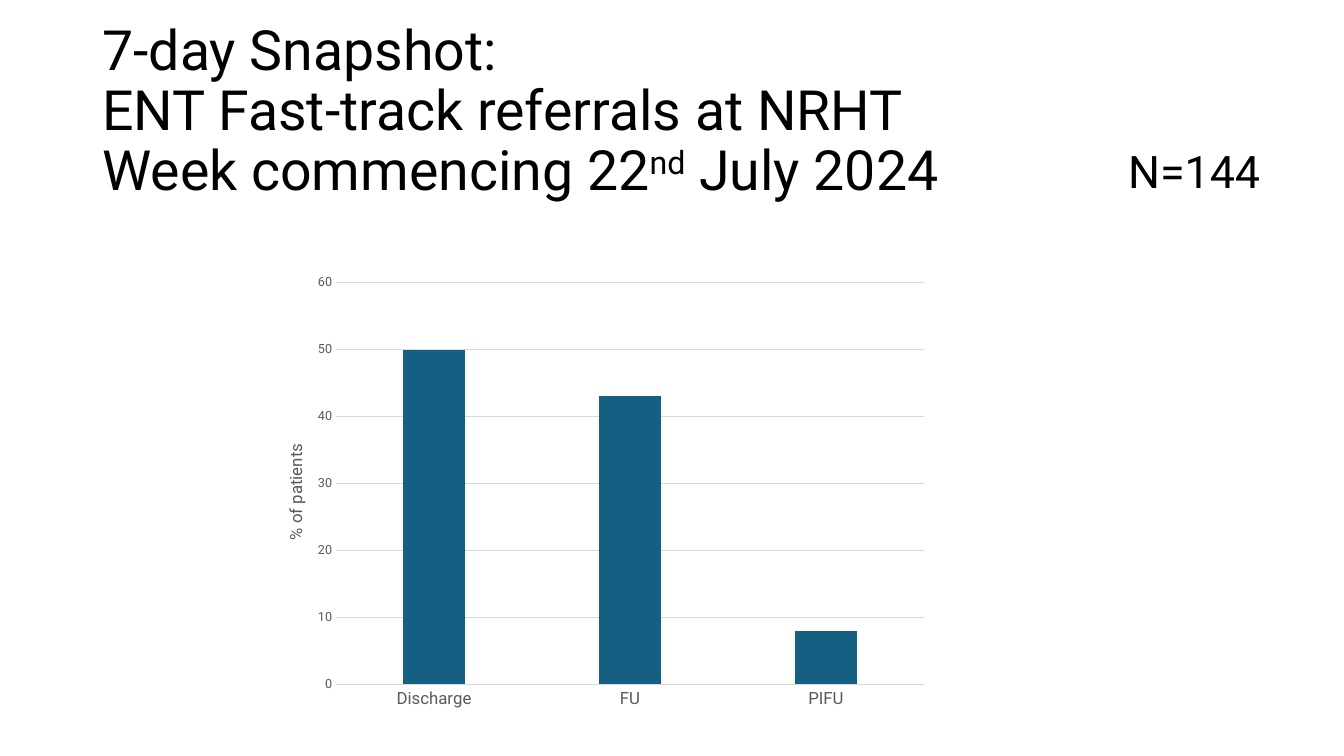
from dataclasses import dataclass

from pptx import Presentation
from pptx.chart.data import CategoryChartData
from pptx.dml.color import RGBColor as RGB
from pptx.enum.chart import XL_CHART_TYPE as CHART, XL_TICK_MARK as TICK
from pptx.enum.text import MSO_ANCHOR as ANCHOR, MSO_AUTO_SIZE as AUTO
from pptx.oxml import parse_xml
from pptx.oxml.ns import nsdecls, qn
from pptx.util import Emu, Pt


@dataclass(frozen=True)
class Theme:
    font: str = "Roboto"
    text: RGB = RGB(0x00, 0x00, 0x00)
    axis: RGB = RGB(0x59, 0x59, 0x59)
    grid: RGB = RGB(0xD9, 0xD9, 0xD9)
    bar: RGB = RGB(0x15, 0x60, 0x82)
    title: float = 39.6
    count: float = 32
    label: float = 12
    tick: float = 9


THEME = Theme()
TITLE_LINES = ["7-day Snapshot:", "ENT Fast-track referrals at NRHT", "Week commencing 22"]
OUTCOMES = {"Discharge": 50, "FU": 43, "PIFU": 8}


def px(n):
    return Emu(n * 9525)


def style(font, size, color):
    font.name, font.size, font.bold = THEME.font, Pt(size), False
    font.color.rgb = color


def add_title(s, box):
    sp = s.shapes.title
    sp.left, sp.top, sp.width, sp.height = map(px, box)
    tf = sp.text_frame
    tf.word_wrap, tf.auto_size = True, AUTO.NONE
    tf.vertical_anchor = ANCHOR.MIDDLE
    p = tf.paragraphs[0]
    p.line_spacing = 0.9
    style(p.font, THEME.title, THEME.text)
    for i, line in enumerate(TITLE_LINES):
        if i:
            p.add_line_break()
        p.add_run().text = line
    ordinal = p.add_run()
    ordinal.text = "nd"
    ordinal.font._element.set("baseline", "30000")
    p.add_run().text = " July 2024"


def add_count(s, box):
    tf = s.shapes.add_textbox(*map(px, box)).text_frame
    tf.word_wrap, tf.auto_size = True, AUTO.SHAPE_TO_FIT_TEXT
    p = tf.paragraphs[0]
    p.text = "N=144"
    style(p.font, THEME.count, THEME.text)


def set_layout(parent, index, **fractions):
    """Place a chart part by fractions of the chart's size."""
    for old in parent.findall(qn("c:layout")):
        parent.remove(old)
    target = '<c:layoutTarget val="inner"/>' if "w" in fractions else ""
    modes = "".join(f'<c:{k}Mode val="edge"/>' for k in fractions if k in "xy")
    values = "".join(f'<c:{k} val="{v}"/>' for k, v in fractions.items())
    parent.insert(index, parse_xml(
        f'<c:layout {nsdecls("c")}><c:manualLayout>{target}{modes}{values}'
        "</c:manualLayout></c:layout>"))


def style_axis(axis, size):
    axis.major_tick_mark = axis.minor_tick_mark = TICK.NONE
    style(axis.tick_labels.font, size, THEME.axis)


def grid_line(line):
    line.color.rgb, line.width = THEME.grid, Pt(0.75)


def add_outcome_chart(s, box):
    data = CategoryChartData(number_format="0")
    data.categories = list(OUTCOMES)
    data.add_series("Series 1", list(OUTCOMES.values()))
    chart = s.shapes.add_chart(CHART.COLUMN_CLUSTERED, *map(px, box), data).chart
    chart.has_title = chart.has_legend = False
    style(chart.font, 10, THEME.text)

    plot = chart.plots[0]
    plot.gap_width, plot.overlap, plot.vary_by_categories = 219, -27, False
    fill = plot.series[0].format.fill
    fill.solid()
    fill.fore_color.rgb = THEME.bar

    cat = chart.category_axis
    style_axis(cat, THEME.label)
    grid_line(cat.format.line)

    val = chart.value_axis
    style_axis(val, THEME.tick)
    val.minimum_scale, val.maximum_scale, val.major_unit = 0, 60, 10
    val.format.line.fill.background()
    grid_line(val.major_gridlines.format.line)
    p = val.axis_title.text_frame.paragraphs[0]
    p.text = "% of patients"
    style(p.font, THEME.label, THEME.axis)

    set_layout(val.axis_title._element, 1, x=0.04, y=0.39)
    plot_area = chart._chartSpace.find(".//" + qn("c:plotArea"))
    set_layout(plot_area, 0, x=0.12, y=0.04, w=0.86, h=0.89)


def main():
    prs = Presentation()
    prs.slide_width, prs.slide_height = px(1280), px(720)
    s = prs.slides.add_slide(prs.slide_layouts[5])
    add_outcome_chart(s, (242, 252, 651, 430))
    add_title(s, (88, 38, 1104, 139))
    for p in s.shapes.title.text_frame.paragraphs:
        p.alignment = 1
    add_count(s, (1065, 132, 170, 61))
    prs.save("out.pptx")


if __name__ == "__main__":
    main()
